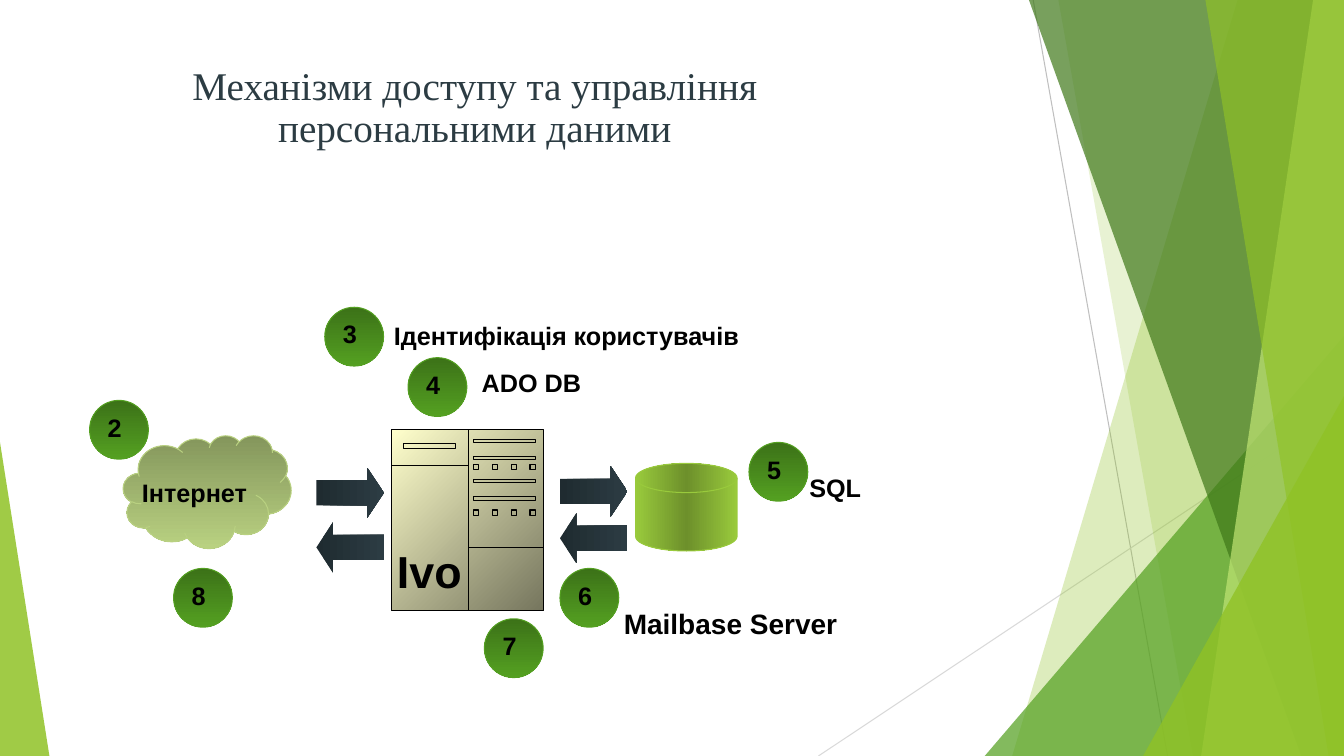
from copy import deepcopy

from pptx import Presentation, util as u
from pptx.dml.color import RGBColor
from pptx.enum import shapes, text
from pptx.oxml import ns, xmlchemy

COLORS = {
    "lime": "90C226", "pale": "C0E474", "green": "54A021", "forest": "3F7819",
    "badge_top": "3C7218", "cloud_top": "84965C", "cloud_bottom": "B9D181",
    "disk_edge": "99CA3C", "disk_middle": "6D902B",
    "arrow_left": "1F2B30", "slate": "2C3C43",
    "server_light": "FFFFCC", "server_dark": "76765E",
    "line_dark": "BFBFBF", "line_light": "D9D9D9", "black": "000000",
}
rgb = {name: RGBColor.from_string(value) for name, value in COLORS.items()}
Pt = u.Pt


def paint(shape, fills, angle=0, line=None, opacity=100):
    """Fill with one colour or a gradient; angle runs clockwise in degrees."""
    shape.shadow.inherit = False
    if len(fills) == 1:
        shape.fill.solid()
        shape.fill.fore_color.rgb = rgb[fills[0]]
        color = shape._element.spPr.find(".//" + ns.qn("a:srgbClr"))
        alpha = xmlchemy.OxmlElement("a:alpha")
        alpha.set("val", str(opacity * 1000))
        color.append(alpha)
    else:
        shape.fill.gradient()
        shape.fill.gradient_angle = -angle % 360
        stop_list = shape._element.spPr.find(".//" + ns.qn("a:gsLst"))
        while len(stop_list) < len(fills):
            stop_list.append(deepcopy(stop_list[0]))
        for index, (stop, name) in enumerate(zip(shape.fill.gradient_stops, fills)):
            stop.position = index / (len(fills) - 1)
            stop.color.rgb = rgb[name]
    if line:
        shape.line.color.rgb = rgb[line]
        shape.line.width = Pt(0.75)
    else:
        shape.line.fill.background()


def write(shape, words, size, font="Arial", color="black", bold=True):
    shape.text_frame.text = words
    run = shape.text_frame.paragraphs[0].runs[0]
    run.font.size = Pt(size)
    run.font.name = font
    run.font.bold = bold
    run.font.color.rgb = rgb[color]


presentation = Presentation()
presentation.slide_width, presentation.slide_height = Pt(960), Pt(540)
slide = presentation.slides.add_slide(presentation.slide_layouts[5])
canvas = slide.shapes

# Title
title = canvas.title
title.left, title.top, title.width, title.height = Pt(98.6), Pt(43.5), Pt(481), Pt(68.4)
write(title, "Механізми доступу та управління персональними даними", 28,
      "Times New Roman", "slate", False)
title.text_frame.word_wrap = True
title.text_frame.vertical_anchor = text.MSO_ANCHOR.MIDDLE
title.text_frame.paragraphs[0].alignment = text.PP_ALIGN.CENTER
title.text_frame.paragraphs[0].line_spacing = 0.9

# Thin lines of the side decoration
for x1, y1, x2, y2, color in [(738, 0, 834, 540, "line_dark"),
                              (960, 290, 584.6, 540, "line_light")]:
    thin_line = canvas.add_connector(shapes.MSO_CONNECTOR.STRAIGHT,
                                     Pt(x1), Pt(y1), Pt(x2), Pt(y2))
    thin_line.line.color.rgb = rgb[color]
    thin_line.line.width = Pt(0.75)
    thin_line._element.spPr.append(xmlchemy.OxmlElement("a:effectLst"))

# Side bands (top x, bottom x) and corner triangles (left, top, width, apex)
decorations = [
    ("band", (884, 723), "lime", 30),
    ("band", (756, 852), "lime", 20),
    ("corner", (703.4, 240, 256.6, 1), "green", 72),
    ("band", (735, 929.5), "forest", 70),
    ("band", (938, 858), "pale", 70),
    ("band", (861, 949), "lime", 65),
    ("corner", (816.5, 283, 143.5, 1), "lime", 80),
    ("corner", (0, 316, 35.3, 0), "lime", 85),
]
for kind, geometry, color, opacity in decorations:
    if kind == "band":
        top_x, bottom_x = geometry
        builder = canvas.build_freeform(Pt(top_x), 0)
        builder.add_line_segments([(Pt(960), 0), (Pt(960), Pt(540)), (Pt(bottom_x), Pt(540))])
        decoration = builder.convert_to_shape()
    else:
        left, top, width, apex = geometry
        decoration = canvas.add_shape(shapes.MSO_SHAPE.ISOSCELES_TRIANGLE,
                                      Pt(left), Pt(top), Pt(width), Pt(540 - top))
        decoration.adjustments[0] = apex
    paint(decoration, [color], opacity=opacity)

# Internet cloud, server body and database
for kind, left, top, width, height, fills, angle, line in [
    ("CLOUD", 88, 311, 120, 80.6, ["cloud_top", "cloud_bottom"], 90, "cloud_bottom"),
    ("RECTANGLE", 280, 307, 108, 129, ["server_light", "server_dark"], 45, "black"),
    ("FLOWCHART_MAGNETIC_DISK", 454, 331, 72.5, 62.6,
     ["disk_edge", "disk_middle", "disk_edge"], 0, "disk_edge"),
]:
    item = canvas.add_shape(shapes.MSO_SHAPE[kind], Pt(left), Pt(top), Pt(width), Pt(height))
    paint(item, fills, angle, line)

# Server panel: dividers, drive slot, bars and lamps
boxes = [(288, 316.8, 37.5, 3.6)]
boxes += [(338.4, top, 44, 2.2) for top in (314, 326, 342.5, 355)]
boxes += [(338.4 + 13.4 * column, top, 3.6, 3.6) for top in (332, 364.3) for column in range(4)]
panel_builder = canvas.build_freeform(Pt(280), Pt(332.6))
panel_builder.add_line_segments([(Pt(335), Pt(332.6))], close=False)
for x1, y1, x2, y2 in [(335, 307, 335, 436), (335, 391, 388, 391)]:
    panel_builder.move_to(Pt(x1), Pt(y1))
    panel_builder.add_line_segments([(Pt(x2), Pt(y2))], close=False)
for left, top, width, height in boxes:
    right, bottom = left + width, top + height
    panel_builder.move_to(Pt(left), Pt(top))
    panel_builder.add_line_segments([(Pt(right), Pt(top)), (Pt(right), Pt(bottom)),
                                     (Pt(left), Pt(bottom))])
panel = panel_builder.convert_to_shape()
panel.shadow.inherit = False
panel.fill.background()
panel.line.color.rgb = rgb["black"]
panel.line.width = Pt(0.75)

# Arrows between the parts
for kind, left, top in [("RIGHT_ARROW", 226, 334), ("LEFT_ARROW", 226, 373),
                        ("RIGHT_ARROW", 400, 333), ("LEFT_ARROW", 400, 366.5)]:
    arrow = canvas.add_shape(shapes.MSO_SHAPE[kind], Pt(left), Pt(top), Pt(48.2), Pt(36))
    arrow.adjustments[0], arrow.adjustments[1] = 0.5, 0.33
    paint(arrow, ["arrow_left", "slate"])

# Numbered badges
for number, left, top in [(2, 64, 286), (3, 232, 219.5), (4, 291.5, 255.5), (5, 535, 316),
                          (6, 400, 406), (7, 346, 442), (8, 124, 406)]:
    badge = canvas.add_shape(shapes.MSO_SHAPE.OVAL, Pt(left), Pt(top), Pt(42), Pt(42))
    paint(badge, ["badge_top", "green"], 90, "green")
    write(badge, str(number), 18)
    frame = badge.text_frame
    frame.margin_left = frame.margin_top = 0
    frame.margin_right, frame.margin_bottom = Pt(6), Pt(4)
    frame.vertical_anchor = text.MSO_ANCHOR.MIDDLE
    frame.paragraphs[0].alignment = text.PP_ALIGN.CENTER

# Labels
for words, left, top, width, height, size in [
    ("Інтернет", 94.3, 337.7, 116, 36, 18),
    ("Ivo", 266.7, 384.5, 80, 45.4, 32),
    ("ADO DB", 337, 259, 109.5, 36, 18),
    ("Ідентифікація користувачів", 274.3, 225.4, 263.5, 29, 18),
    ("SQL", 571, 334, 64, 36, 18),
    ("Mailbase Server", 438.5, 430, 177, 31, 20),
]:
    label = canvas.add_textbox(Pt(left), Pt(top), Pt(width), Pt(height))
    write(label, words, size)
    label.text_frame.word_wrap = False
    label.text_frame.auto_size = text.MSO_AUTO_SIZE.SHAPE_TO_FIT_TEXT
    if size == 32:
        label.text_frame.paragraphs[0].alignment = text.PP_ALIGN.CENTER

presentation.save("out.pptx")
